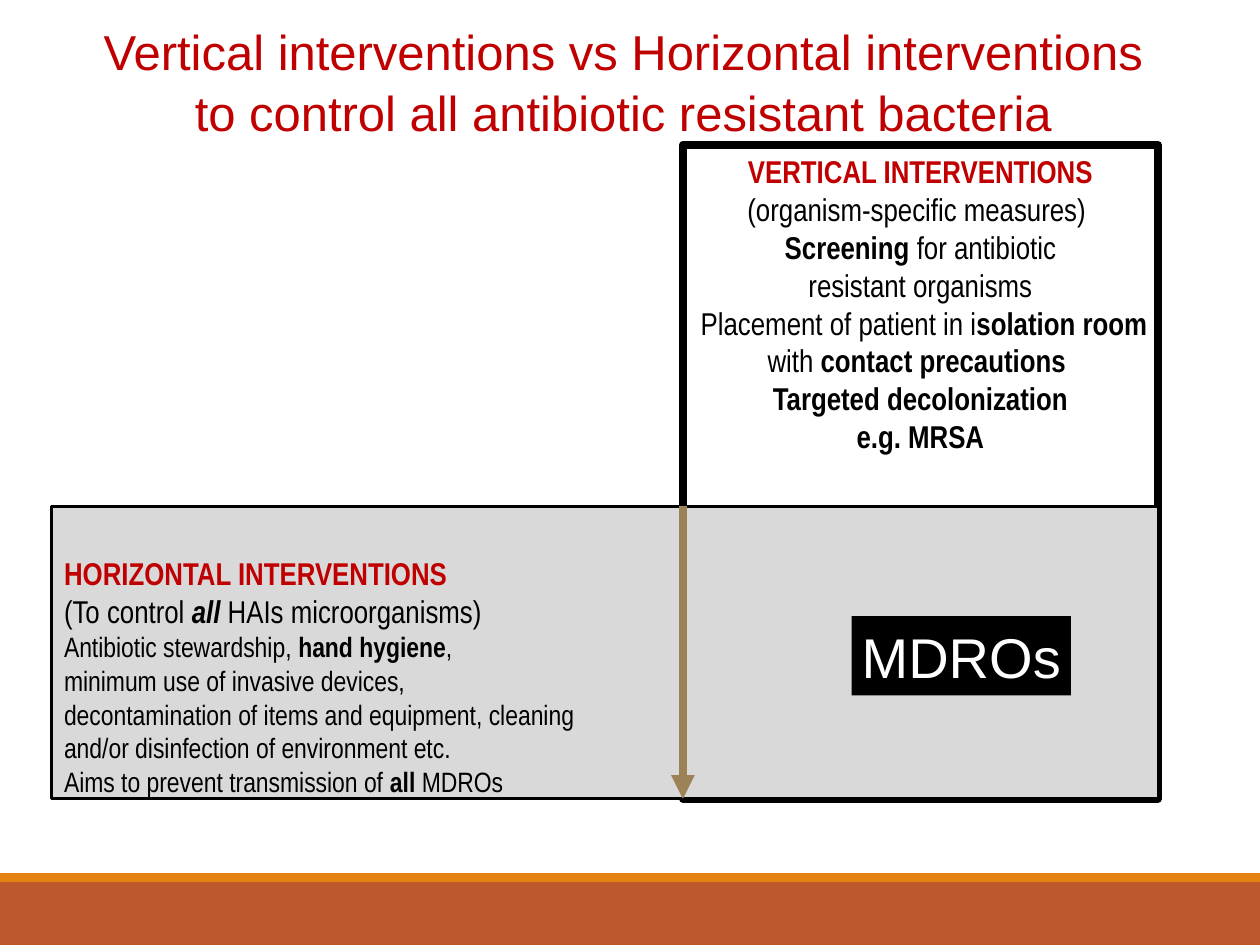
from lxml import etree
from pptx import Presentation
from pptx.dml.color import RGBColor
from pptx.enum.shapes import MSO_CONNECTOR, MSO_SHAPE
from pptx.enum.text import MSO_ANCHOR, MSO_AUTO_SIZE, PP_ALIGN
from pptx.oxml.ns import qn
from pptx.util import Inches, Pt

RECTANGLE = MSO_SHAPE.RECTANGLE
TOP, MIDDLE = MSO_ANCHOR.TOP, MSO_ANCHOR.MIDDLE
LEFT, CENTER = PP_ALIGN.LEFT, PP_ALIGN.CENTER
RED, BLACK, WHITE = "C00000", "000000", "FFFFFF"
WIDTH, HEIGHT = 10, 7.5

# Edges shared by the two overlapping boxes
ROW_LEFT, COLUMN_LEFT, RIGHT = 0.41, 5.42, 9.19
COLUMN_TOP, ROW_TOP, BOTTOM = 1.15, 4.02, 6.34


def color(value):
    return RGBColor.from_string(value)


def add_rectangle(left, top, right, bottom, fill, line_width=0):
    shape = page.shapes.add_shape(RECTANGLE, Inches(left), Inches(top),
                                  Inches(right - left), Inches(bottom - top))
    shape.shadow.inherit = False
    shape.fill.solid()
    shape.fill.fore_color.rgb = color(fill)
    if line_width:
        shape.line.color.rgb = color(BLACK)
        shape.line.width = Pt(line_width)
    else:
        shape.line.fill.background()
    return shape


deck = Presentation()
deck.slide_width, deck.slide_height = Inches(WIDTH), Inches(HEIGHT)
page = deck.slides.add_slide(deck.slide_layouts[5])

# Footer bands
add_rectangle(0, 7, WIDTH, HEIGHT, "BD582C")
add_rectangle(0, 6.93, WIDTH, 7, "E48312")

# Title
title = page.shapes.title
title.left, title.top = 0, Inches(0.1)
title.width, title.height = Inches(WIDTH), Inches(1.07)
frame = title.text_frame
frame.text = ("Vertical interventions vs Horizontal interventions \v"
              "to control all antibiotic resistant bacteria ")
frame.auto_size = MSO_AUTO_SIZE.NONE
frame.vertical_anchor = MIDDLE
frame.margin_left = frame.margin_right = frame.margin_top = frame.margin_bottom = 0
heading = frame.paragraphs[0]
heading.alignment = CENTER
heading.line_spacing = 1.05
for span in heading.runs:
    span.font.name, span.font.size = "Arial", Pt(28)
    span.font.color.rgb = color(RED)

# Intervention boxes: asterisks switch bold on and off, "all " is also italic
vertical_lines = [
    (18, "*VERTICAL INTERVENTIONS"),
    (18, "(organism-specific measures) "),
    (18, "*Screening* for antibiotic"),
    (18, "resistant organisms"),
    (18, " Placement of patient in i*solation room"),
    (18, "with* contact precautions "),
    (18, "*Targeted decolonization"),
    (18, "*e.g. MRSA"),
]
horizontal_lines = [
    (18, "*HORIZONTAL INTERVENTIONS"),
    (18, "(To control *all *HAIs microorganisms)"),
    (16, "Antibiotic stewardship, *hand hygiene*,"),
    (16, "minimum use of invasive devices,"),
    (16, "decontamination of items and equipment, cleaning"),
    (16, "and/or disinfection of environment etc."),
    (16, "Aims to prevent transmission of *all* MDROs"),
]
vertical_box = add_rectangle(COLUMN_LEFT, COLUMN_TOP, RIGHT, BOTTOM, WHITE, 4.5)
horizontal_box = add_rectangle(ROW_LEFT, ROW_TOP, RIGHT, BOTTOM, "D9D9D9", 1.5)

for box, lines, alignment, side, top in (
        (vertical_box, vertical_lines, CENTER, 0.05, 0.06),
        (horizontal_box, horizontal_lines, LEFT, 0.1, 0.38)):
    frame = box.text_frame
    frame.word_wrap = True
    frame.vertical_anchor = TOP
    frame.margin_left = frame.margin_right = Inches(side)
    frame.margin_top, frame.margin_bottom = Inches(top), 0
    for row, (size, text) in enumerate(lines):
        para = frame.paragraphs[0] if row == 0 else frame.add_paragraph()
        para.alignment = alignment
        for index, part in enumerate(text.split("*")):
            if not part:
                continue
            span = para.add_run()
            span.text = part
            span.font.name, span.font.size = "Arial Narrow", Pt(size)
            span.font.bold = index % 2 == 1
            span.font.italic = part == "all "
            span.font.color.rgb = color(RED if row == 0 else BLACK)

# Arrow down the shared edge
arrow = page.shapes.add_connector(
    MSO_CONNECTOR.STRAIGHT, Inches(COLUMN_LEFT), Inches(ROW_TOP),
    Inches(COLUMN_LEFT), Inches(BOTTOM))
arrow.line.color.rgb = color("9B8357")
arrow.line.width = Pt(4.5)
etree.SubElement(arrow.line._get_or_add_ln(), qn("a:tailEnd"), type="triangle")
etree.SubElement(arrow._element.spPr, qn("a:effectLst"))

# Label in the overlap
label = add_rectangle(6.76, 4.89, 8.5, 5.52, BLACK)
frame = label.text_frame
frame.text = "MDROs"
frame.word_wrap = False
frame.vertical_anchor = MIDDLE
para = frame.paragraphs[0]
para.alignment = CENTER
para.font.name, para.font.size = "Arial", Pt(32)
para.font.color.rgb = color(WHITE)

deck.save("out.pptx")
